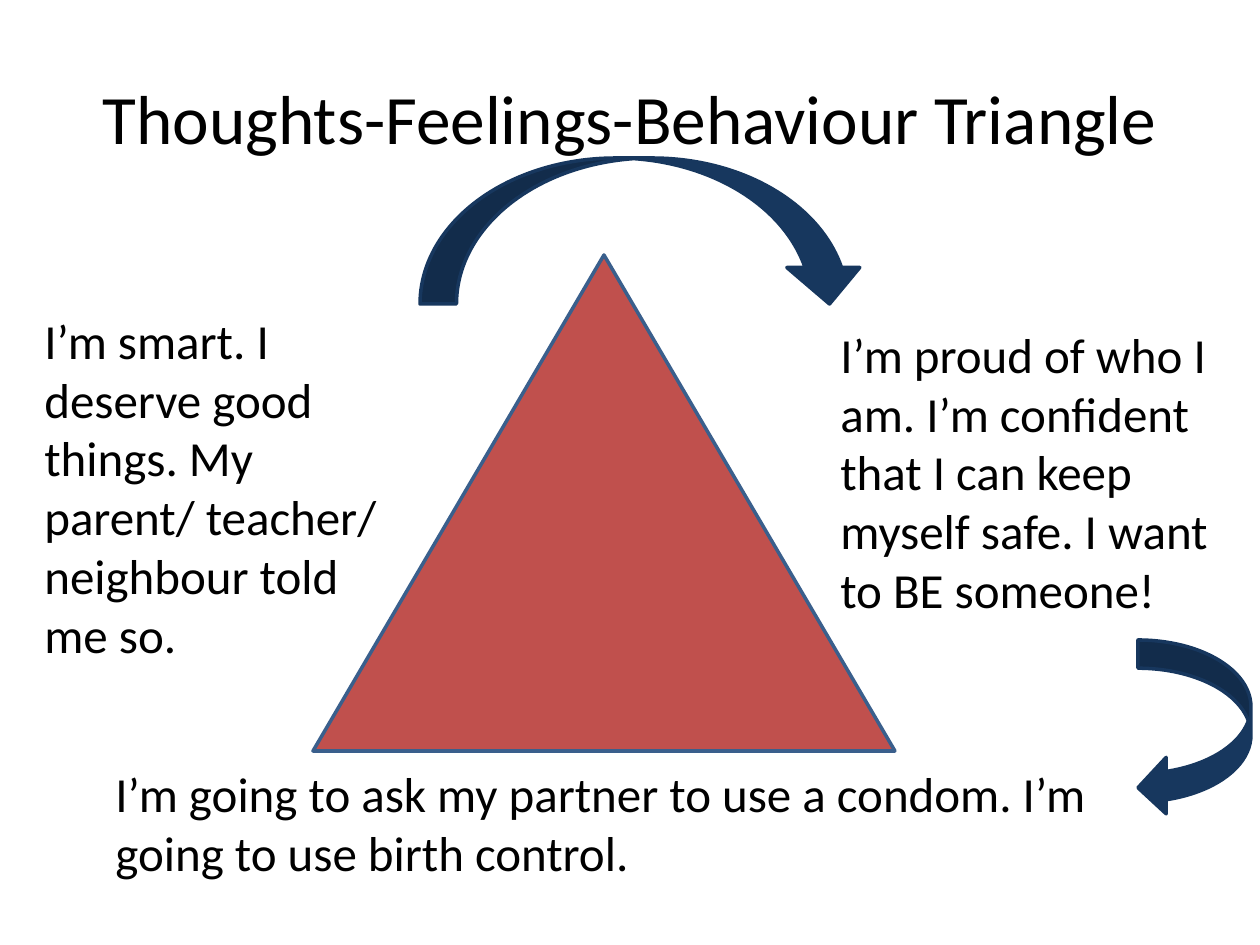
from pptx import Presentation
from pptx import util as u
from pptx.dml.color import RGBColor
from pptx.enum import shapes, text

PX = 914400 / 126
BLACK = RGBColor(0x00, 0x00, 0x00)
RED = RGBColor(0xC0, 0x50, 0x4D)
BLUE = RGBColor(0x3A, 0x5F, 0x8C)
NAVY = RGBColor(0x17, 0x37, 0x5E)


def box(*lengths):
    return [u.Emu(round(length * PX)) for length in lengths]


def write(paragraph, words, size):
    run = paragraph.add_run()
    run.text = words
    run.font.name = "Calibri"
    run.font.size = u.Pt(size)
    run.font.color.rgb = BLACK


deck = Presentation()
deck.slide_width, deck.slide_height = box(1260, 945)
slide = deck.slides.add_slide(deck.slide_layouts[5])

heading = slide.shapes.title
heading.left, heading.top, heading.width, heading.height = box(63, 38, 1134, 158)
heading.text_frame.word_wrap = True
heading.text_frame.auto_size = text.MSO_AUTO_SIZE.NONE
heading.text_frame.vertical_anchor = text.MSO_ANCHOR.MIDDLE
heading.text_frame.paragraphs[0].alignment = text.PP_ALIGN.CENTER
write(heading.text_frame.paragraphs[0], "Thoughts-Feelings-Behaviour Triangle", 39.6)

triangle = (shapes.MSO_SHAPE.ISOSCELES_TRIANGLE, (313, 255, 582, 496), RED, BLUE)
to_feelings = (shapes.MSO_SHAPE.CURVED_DOWN_ARROW, (420, 158, 446, 146), NAVY, NAVY)
to_behaviour = (shapes.MSO_SHAPE.CURVED_LEFT_ARROW, (1138, 640, 113, 176), NAVY, NAVY)

thoughts = ("I’m smart. I deserve good things. My parent/ teacher/ neighbour told me so.",
            (32, 304, 388, 369))
feelings = ("I’m proud of who I am. I’m confident that I can keep myself safe. I want to BE someone!",
            (828, 318, 401, 310))
behaviour = ("I’m going to ask my partner to use a condom. I’m going to use birth control.",
             (103, 757, 1053, 131))

for preset, place, fill, line in (triangle, to_feelings, to_behaviour):
    figure = slide.shapes.add_shape(preset, *box(*place))
    figure.shadow.inherit = False
    figure.fill.solid()
    figure.fill.fore_color.rgb = fill
    figure.line.color.rgb = line
    figure.line.width = u.Pt(2)

for words, place in (thoughts, feelings, behaviour):
    frame = slide.shapes.add_textbox(*box(*place)).text_frame
    frame.word_wrap = True
    frame.auto_size = text.MSO_AUTO_SIZE.SHAPE_TO_FIT_TEXT
    write(frame.paragraphs[0], words, 28)

deck.save("out.pptx")
